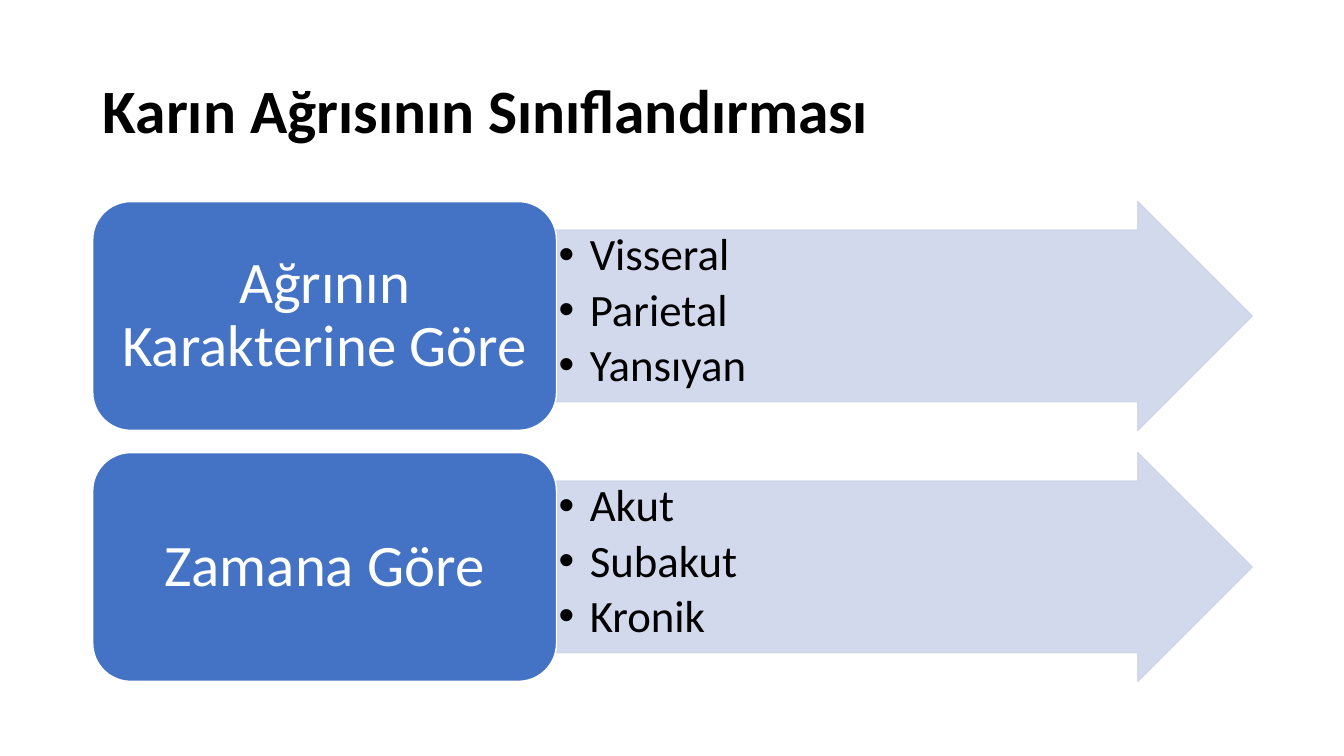
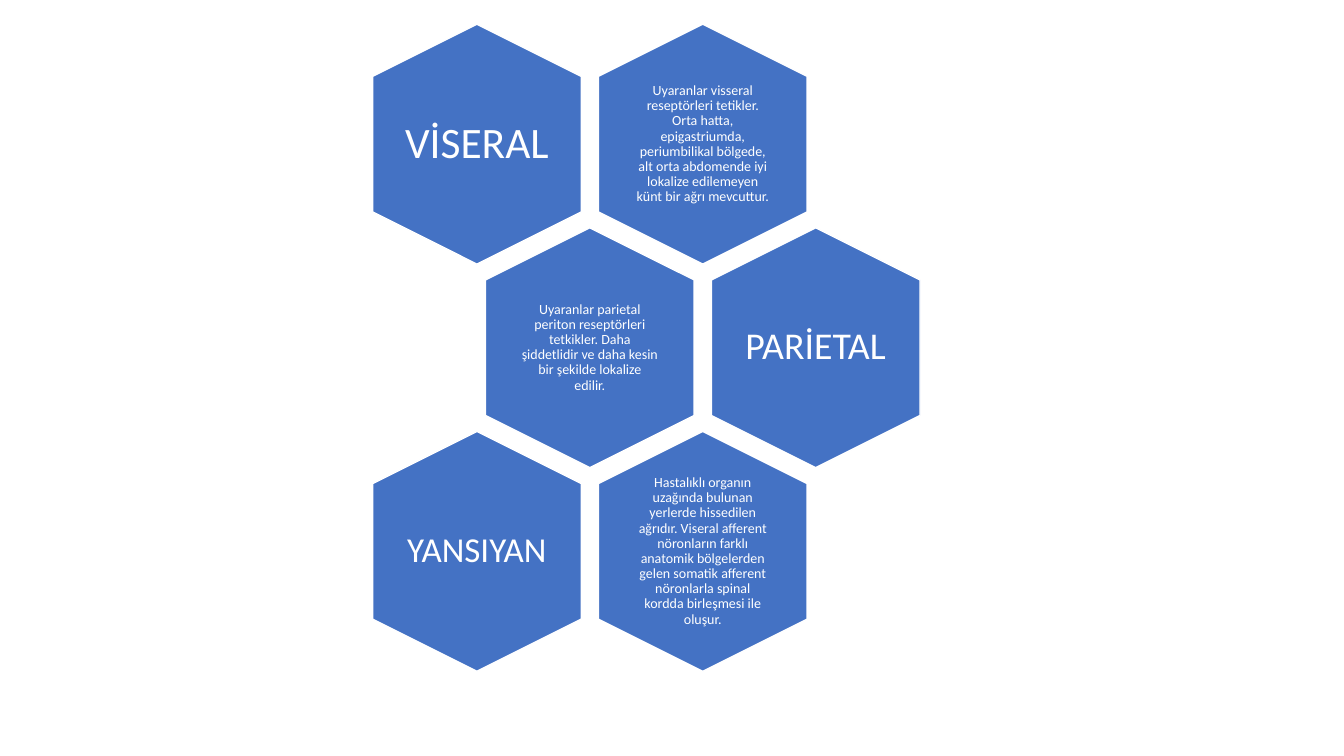
"""Build two slides that classify abdominal pain."""
from lxml import etree
from pptx import Presentation
from pptx.dml.color import RGBColor
from pptx.enum.shapes import MSO_SHAPE as Preset
from pptx.enum.text import MSO_ANCHOR as Anchor, MSO_AUTO_SIZE as AutoSize, PP_ALIGN as Align
from pptx.oxml.ns import qn
from pptx.util import Inches, Pt

BLUE, PALE, WHITE, BLACK = "4472C4", "CFD5EA", "FFFFFF", "000000"


def paint(target, color):
    target.rgb = RGBColor.from_string(color)


def write(holder, lines, size, color, align, anchor, inset_x, inset_y, bold=False):
    frame = holder.text_frame
    frame.text = "\n".join(lines)
    frame_format = {
        "word_wrap": True, "auto_size": AutoSize.NONE, "vertical_anchor": anchor,
        "margin_left": Inches(inset_x), "margin_right": Inches(inset_x),
        "margin_top": Inches(inset_y), "margin_bottom": Inches(inset_y),
    }
    for key, value in frame_format.items():
        setattr(frame, key, value)
    for paragraph in frame.paragraphs:
        paragraph.alignment = align
        paragraph.line_spacing = 0.9
        for key, value in {"name": "Calibri", "size": Pt(size), "bold": bold}.items():
            setattr(paragraph.font, key, value)
        paint(paragraph.font.color, color)


deck = Presentation()
deck.slide_width, deck.slide_height = Inches(13.33), Inches(7.5)

overview = deck.slides.add_slide(deck.slide_layouts[5])
title = overview.shapes.title
title_place = {"left": 0.92, "top": 0.4, "width": 11.5, "height": 1.45}
for side, length in title_place.items():
    setattr(title, side, Inches(length))
write(title, ["Karın Ağrısının Sınıflandırması"], 44, BLACK, Align.LEFT, Anchor.MIDDLE,
      0.1, 0.05, bold=True)

criteria = [
    ("Ağrının Karakterine Göre", ["Visseral", "Parietal", "Yansıyan"]),
    ("Zamana Göre", ["Akut", "Subakut", "Kronik"]),
]
row_top, row_pitch, row_height = 2, 2.49, 2.27
label_left, label_width, arrow_width = 0.92, 4.6, 6.9

for row, (criterion, kinds) in enumerate(criteria):
    top = Inches(row_top + row * row_pitch)
    arrow = overview.shapes.add_shape(
        Preset.RIGHT_ARROW, Inches(label_left + label_width), top,
        Inches(arrow_width), Inches(row_height))
    arrow.adjustments[0], arrow.adjustments[1] = 0.75, 0.5
    label = overview.shapes.add_shape(
        Preset.ROUNDED_RECTANGLE, Inches(label_left), top,
        Inches(label_width), Inches(row_height))
    for part, fill, edge in ((arrow, PALE, PALE), (label, BLUE, WHITE)):
        part.shadow.inherit = False
        part.fill.solid()
        paint(part.fill.fore_color, fill)
        paint(part.line.color, edge)
        part.line.width = Pt(1)
    for tint in arrow._element.spPr.iter(qn("a:srgbClr")):
        etree.SubElement(tint, qn("a:alpha"), val="90000")
    write(label, [criterion], 42, WHITE, Align.CENTER, Anchor.MIDDLE, 0.17, 0.09)
    write(arrow, kinds, 32, BLACK, Align.LEFT, Anchor.TOP, 0.02, 0.02)
    for kind in arrow.text_frame.paragraphs:
        kind.space_after = Pt(4.8)
        properties = kind._p.get_or_add_pPr()
        properties.set("marL", str(Inches(0.31)))
        properties.set("indent", str(-Inches(0.31)))
        etree.SubElement(properties, qn("a:buFont"), typeface="Arial")
        etree.SubElement(properties, qn("a:buChar"), char="•")

details = deck.slides.add_slide(deck.slide_layouts[6])
pain_rows = [
    [("VİSERAL", 31),
     ("Uyaranlar visseral reseptörleri tetikler. Orta hatta, epigastriumda, periumbilikal "
      "bölgede, alt orta abdomende iyi lokalize edilemeyen künt bir ağrı mevcuttur.", 10)],
    [("Uyaranlar parietal periton reseptörleri tetkikler. Daha şiddetlidir ve daha kesin bir "
      "şekilde lokalize edilir.", 10),
     ("PARİETAL", 27)],
    [("YANSIYAN", 25),
     ("Hastalıklı organın uzağında bulunan yerlerde hissedilen ağrıdır. Viseral afferent "
      "nöronların farklı anatomik bölgelerden gelen somatik afferent nöronlarla spinal kordda "
      "birleşmesi ile oluşur.", 10)],
]
cell_length, cell_breadth = 2.38, 2.07
text_width, text_height = 1.43, 1.64
first_x, first_y, pitch_x, pitch_y = 4.73, 1.43, 2.24, 2.02

for row, cells in enumerate(pain_rows):
    for column, (wording, size) in enumerate(cells):
        center_x = first_x + (column + row % 2 / 2) * pitch_x
        center_y = first_y + row * pitch_y
        cell = details.shapes.add_shape(
            Preset.HEXAGON, Inches(center_x - cell_length / 2),
            Inches(center_y - cell_breadth / 2), Inches(cell_length), Inches(cell_breadth))
        cell.rotation = 90
        cell.adjustments[0] = 0.25
        cell.shadow.inherit = False
        cell.fill.solid()
        paint(cell.fill.fore_color, BLUE)
        paint(cell.line.color, WHITE)
        cell.line.width = Pt(1)
        caption = details.shapes.add_textbox(
            Inches(center_x - text_width / 2), Inches(center_y - text_height / 2),
            Inches(text_width), Inches(text_height))
        inset = 0.04 if size == 10 else 0
        write(caption, [wording], size, WHITE, Align.CENTER, Anchor.MIDDLE, inset, inset)

deck.save("out.pptx")
